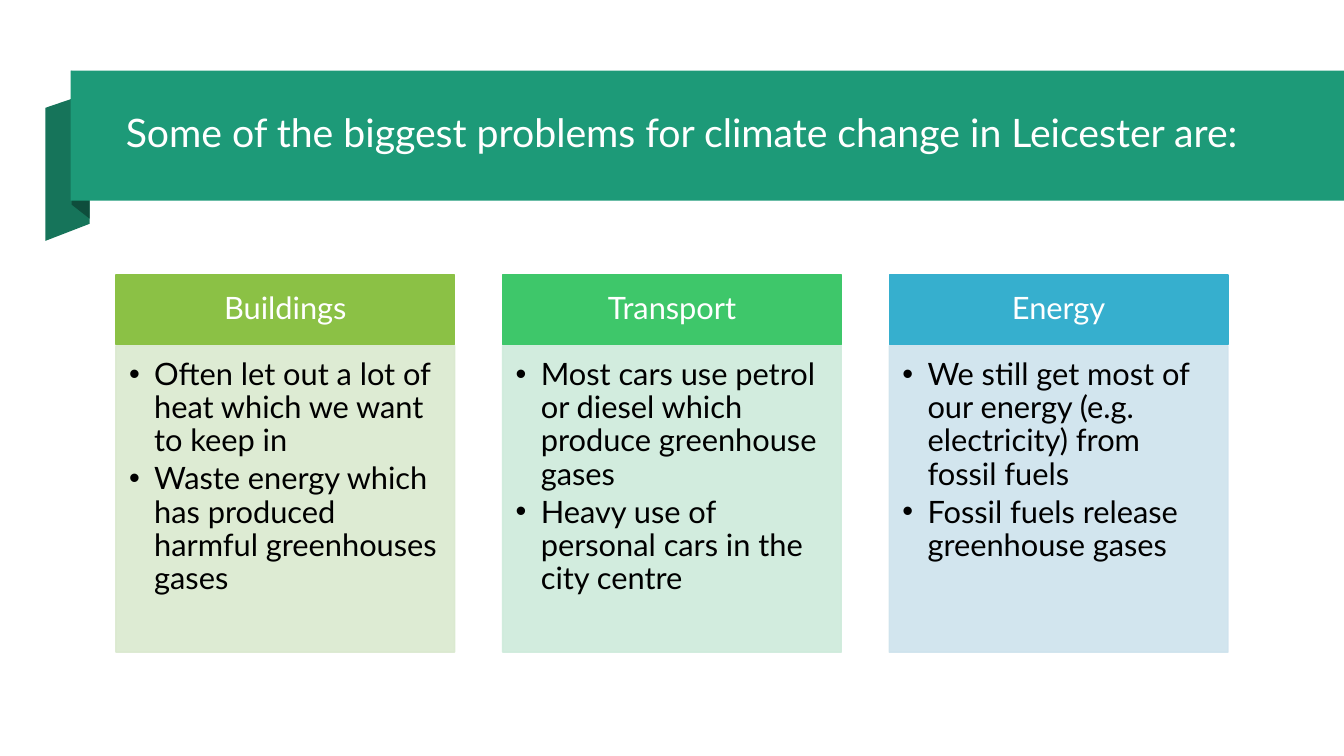
"""Builds the slide on Leicester's biggest climate change problems."""
from lxml import etree
from pptx import Presentation, util as u
from pptx.dml.color import RGBColor
from pptx.enum import shapes, text
from pptx.oxml.ns import qn

deck = Presentation()
deck.slide_width, deck.slide_height = u.Inches(13.33), u.Inches(7.5)
slide = deck.slides.add_slide(deck.slide_layouts[6])


def paint(shape, color, edge=False, alpha=None):
    """Fill a shape, with an outline of the same colour if asked."""
    shape.shadow.inherit = False
    fills = [shape.fill]
    if edge:
        shape.line.width = u.Pt(1)
        fills.append(shape.line.fill)
    else:
        shape.line.fill.background()
    for fill in fills:
        fill.solid()
        fill.fore_color.rgb = RGBColor.from_string(color)
    if alpha:
        for node in list(shape._element.spPr.iter(qn("a:srgbClr"))):
            etree.SubElement(node, qn("a:alpha"), val=str(alpha * 1000))


def write(shape, lines, size=22, color="FFFFFF", align="LEFT", anchor="MIDDLE",
          inset=(0.1, 0.05, 0.1, 0.05), after=0, bullet=False):
    """Put formatted paragraphs in a shape."""
    frame = shape.text_frame
    frame.word_wrap = True
    frame.vertical_anchor = text.MSO_ANCHOR[anchor]
    (frame.margin_left, frame.margin_top,
     frame.margin_right, frame.margin_bottom) = map(u.Inches, inset)
    frame.text = "\n".join(lines)
    for para in frame.paragraphs:
        para.alignment = text.PP_ALIGN[align]
        para.line_spacing = 0.9
        para.space_after = u.Pt(after)
        font = para.runs[0].font
        font.name, font.size = "Lato", u.Pt(size)
        font.color.rgb = RGBColor.from_string(color)
        if bullet:
            props = para._p.get_or_add_pPr()
            props.set("marL", str(u.Inches(0.25)))
            props.set("indent", str(-u.Inches(0.25)))
            etree.SubElement(props, qn("a:buFont"), typeface="Arial")
            etree.SubElement(props, qn("a:buChar"), char="•")


folds = [
    ("16745A", [(0.89, 2.22), (0.45, 2.39), (0.45, 1.07), (0.89, 0.92)]),
    ("0E4D3C", [(0.89, 2.17), (0.71, 2.03), (0.71, 0.7), (0.89, 0.85)]),
]
for color, points in folds:
    path = [(u.Inches(x), u.Inches(y)) for x, y in points]
    pen = slide.shapes.build_freeform(*path[0])
    pen.add_line_segments(path[1:], close=True)
    paint(pen.convert_to_shape(), color)

RECT = shapes.MSO_SHAPE.RECTANGLE
banner = slide.shapes.add_shape(
    RECT, u.Inches(0.7), u.Inches(0.7), u.Inches(12.63), u.Inches(1.29))
paint(banner, "1D9A78")
title = slide.shapes.add_textbox(
    u.Inches(1.15), u.Inches(0.86), u.Inches(11.27), u.Inches(0.96))
write(title, ["Some of the biggest problems for climate change in Leicester are:"],
      size=28)

cards = [
    ("Buildings", "8BC145", "DAE9CF", [
        "Often let out a lot of heat which we want to keep in",
        "Waste energy which has produced harmful greenhouses gases"]),
    ("Transport", "3EC76A", "CEEBDB", [
        "Most cars use petrol or diesel which produce greenhouse gases",
        "Heavy use of personal cars in the city centre"]),
    ("Energy", "36AFCE", "CEE3ED", [
        "We still get most of our energy (e.g. electricity) from fossil fuels",
        "Fossil fuels release greenhouse gases"]),
]
wide = u.Inches(3.36)
for i, (name, dark, pale, facts) in enumerate(cards):
    left = u.Inches(1.15 + i * 3.835)
    head = slide.shapes.add_shape(RECT, left, u.Inches(2.73), wide, u.Inches(0.69))
    paint(head, dark, edge=True)
    write(head, [name], align="CENTER", inset=(0.17, 0.1, 0.17, 0.1))
    body = slide.shapes.add_shape(RECT, left, u.Inches(3.43), wide, u.Inches(3.04))
    paint(body, pale, edge=True, alpha=90)
    write(body, facts, color="000000", anchor="TOP",
          inset=(0.13, 0.13, 0.17, 0.19), after=3.3, bullet=True)

deck.save("out.pptx")
